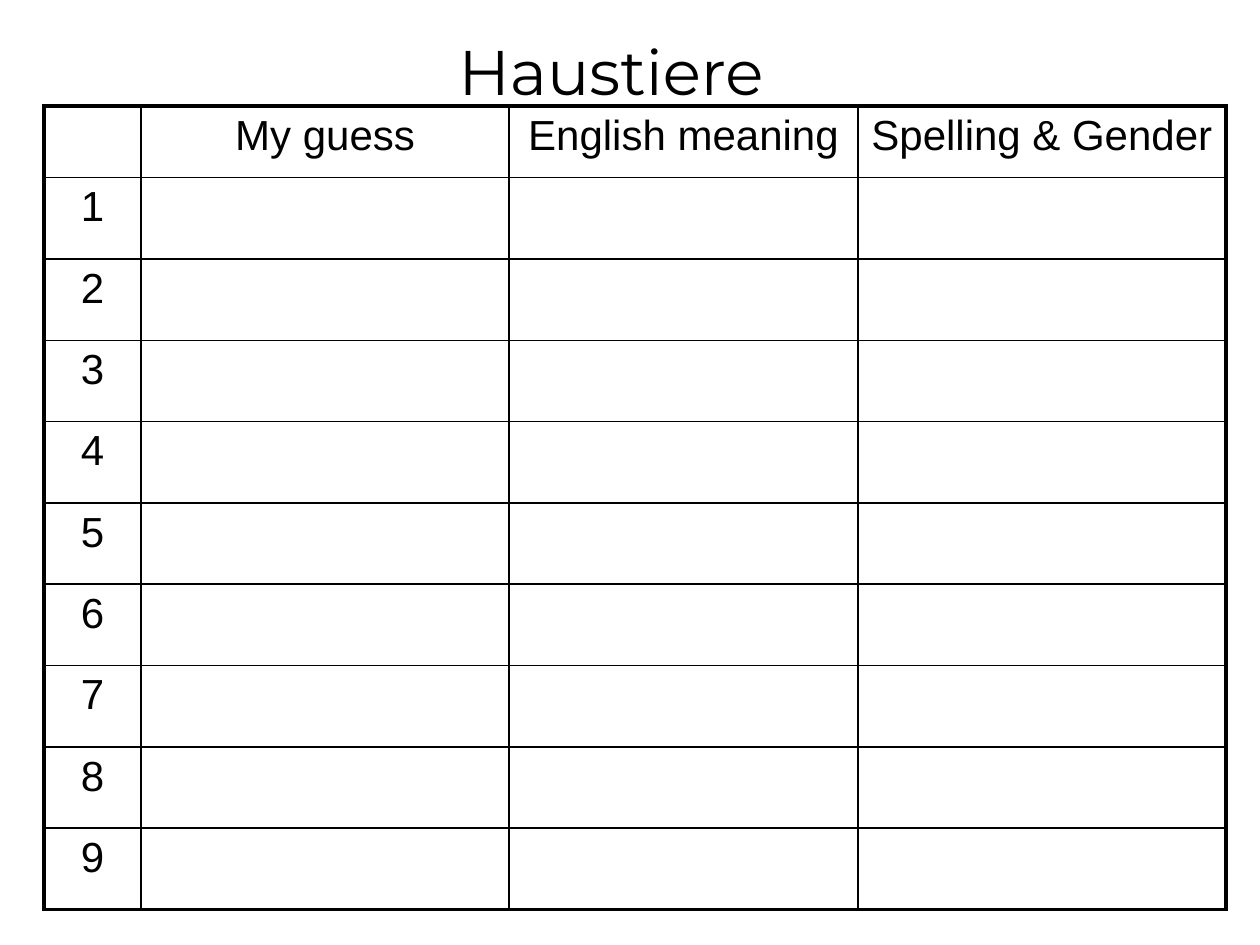
from lxml.etree import SubElement as Sub
from pptx import Presentation
from pptx.dml.color import RGBColor as RGB
from pptx.enum.text import MSO_ANCHOR as Anchor, PP_ALIGN as Align
from pptx.oxml import parse_xml
from pptx.oxml.ns import nsdecls, qn
from pptx.util import Inches, Pt

INK = {"text": "000000", "line": "000000"}
THICK, THIN = 2.25, 1


def write(frame, text, font="Arial", size=24, before=None, edge=None):
    para = frame.paragraphs[0]
    para.alignment = Align.CENTER
    if before:
        gap = Sub(para._p.get_or_add_pPr(), qn("a:spcBef"))
        Sub(gap, qn("a:spcPct"), val=str(before * 1000))
    run = para.add_run()
    run.text = text
    run.font.name = font
    run.font.size = Pt(size)
    run.font.color.rgb = RGB.from_string(INK["text"])
    if edge:
        run._r.get_or_add_rPr().insert(0, stroke("ln", edge))


def stroke(tag, width):
    return parse_xml(
        f'<a:{tag} {nsdecls("a")} w="{Pt(width)}"><a:solidFill>'
        f'<a:srgbClr val="{INK["line"]}"/></a:solidFill></a:{tag}>'
    )


deck = Presentation()
deck.slide_width, deck.slide_height = Inches(10), Inches(7.5)
slide = deck.slides.add_slide(deck.slide_layouts[6])

heads = ["", "My guess", "English meaning", "Spelling & Gender"]
rows = [heads] + [[str(n), "", "", ""] for n in range(1, 10)]
widths = [0.77, 2.92, 2.77, 2.92]
high, top = 6.38, 0.57
step = (high - top) / (len(rows) - 1)

grid = slide.shapes.add_table(
    len(rows), len(heads), Inches(0.35), Inches(0.84), Inches(sum(widths)), Inches(high)
).table
grid.first_row = grid.horz_banding = False
for col, width in zip(grid.columns, widths):
    col.width = Inches(width)

for r, row in enumerate(rows):
    grid.rows[r].height = Inches(step if r else top)
    for c, text in enumerate(row):
        cell = grid.cell(r, c)
        cell.fill.background()
        outer = {
            "lnL": c == 0,
            "lnR": c == len(heads) - 1,
            "lnT": r == 0,
            "lnB": r == len(rows) - 1,
        }
        for i, (side, rim) in enumerate(outer.items()):
            cell._tc.tcPr.insert(i, stroke(side, THICK if rim else THIN))
        if text:
            write(cell.text_frame, text, before=20)

title = slide.shapes.add_textbox(Inches(2.8), Inches(0.21), Inches(4.1), Inches(0.47))
title.text_frame.word_wrap = False
title.text_frame.vertical_anchor = Anchor.TOP
write(title.text_frame, "Haustiere", font="Montserrat", size=36, edge=0.75)

deck.save("out.pptx")
